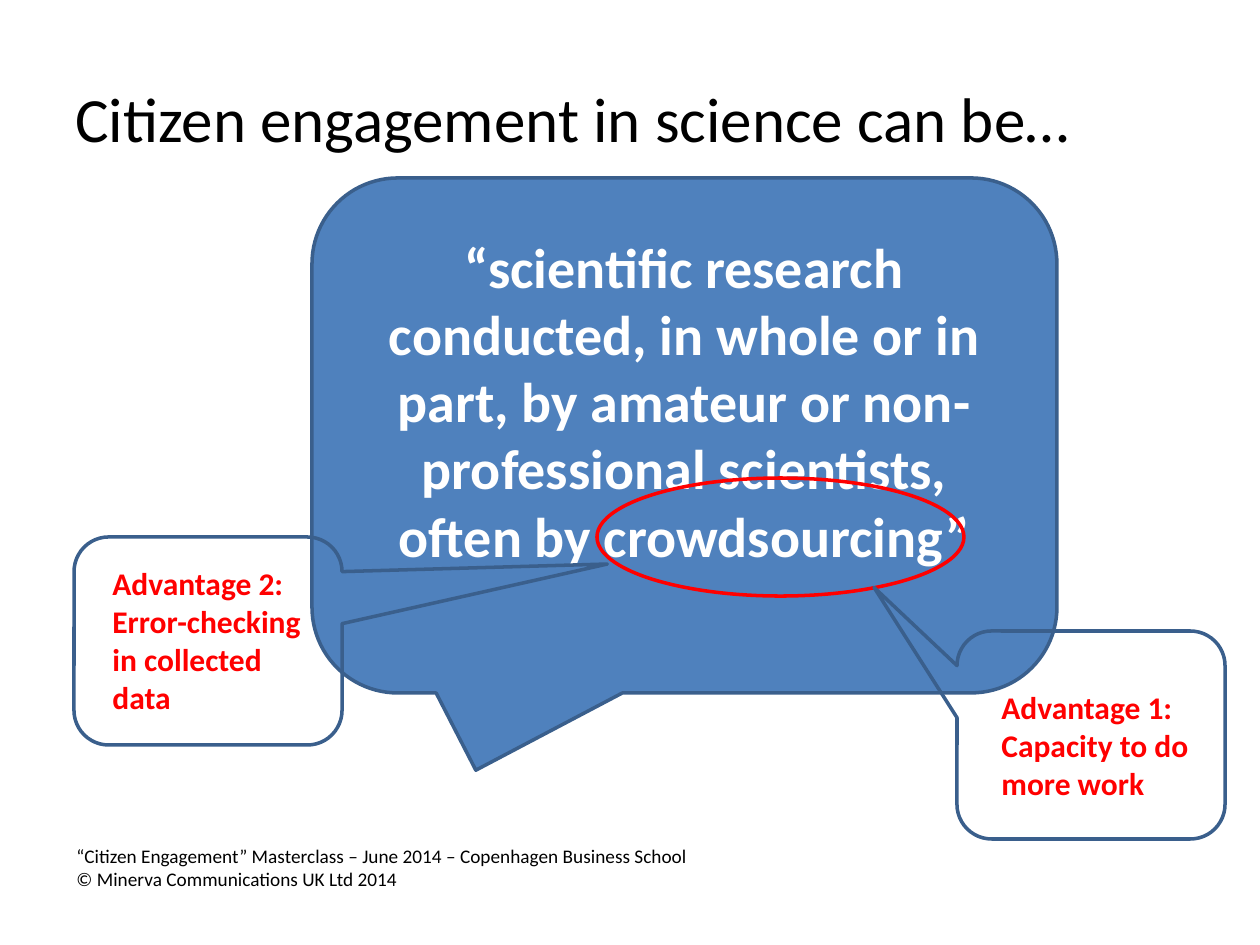
from pptx import Presentation
from pptx.dml.color import RGBColor as RGB
from pptx.enum.shapes import MSO_SHAPE as Shape
from pptx.enum.text import MSO_ANCHOR as Anchor, PP_ALIGN as Align
from pptx.util import Pt

PX = 914400 / 126

THEME = {
    "font": "Calibri",
    "black": "000000", "white": "FFFFFF", "red": "FF0000",
    "blue": "4F81BD", "edge": "3A5F8C",
    "title": 36, "quote": 32, "label": 18, "foot": 11,
    "line": 2,
}

# Content: text, box in px, size, colour, bold, alignment, anchor
FOOT = ("“Citizen Engagement” Masterclass – June 2014 – Copenhagen Business School\v"
        "© Minerva Communications UK Ltd 2014",
        (64, 800, 714, 97), "foot", "black", False, Align.LEFT, Anchor.BOTTOM)
TITLE = ("Citizen engagement in science can be…",
         (63, 38, 1134, 158), "title", "black", False, Align.LEFT, Anchor.MIDDLE)
QUOTE = ("“scientific research conducted, in whole or in part, by amateur or "
         "non-professional scientists, often by crowdsourcing”",
         (362, 226, 645, 352), "quote", "white", True, Align.CENTER, Anchor.TOP)
LABELS = [
    (text, box, "label", "red", True, Align.LEFT, Anchor.TOP)
    for text, box in [
        ("Advantage 1: Capacity to do more work", (989, 682, 218, 127)),
        ("Advantage 2: Error-checking in collected data", (100, 558, 218, 165)),
    ]
]

# Outlines: kind, box in px, fill, line, tail tip relative to the centre
CALL = Shape.ROUNDED_RECTANGULAR_CALLOUT
BUBBLE = (CALL, (312, 178, 745, 515), "blue", "edge", (-0.28, 0.65))
MARKS = [
    (Shape.OVAL, (597, 478, 367, 118), None, "red", None),
    (CALL, (957, 631, 268, 208), None, "edge", (-0.81, -0.71)),
    (CALL, (74, 537, 268, 208), None, "edge", (1.49, -0.37)),
]


def scale(box):
    return [round(n * PX) for n in box]


def tint(name):
    return RGB.from_string(THEME[name])


def write(slide, text, box, size, color, bold, align, anchor):
    frame = slide.shapes.add_textbox(*scale(box)).text_frame
    frame.word_wrap = True
    frame.vertical_anchor = anchor
    para = frame.paragraphs[0]
    para.text = text
    para.alignment = align
    for run in para.runs:
        font = run.font
        font.name, font.size, font.bold = THEME["font"], Pt(THEME[size]), bold
        font.color.rgb = tint(color)


def draw(slide, kind, box, fill, line, tip):
    shape = slide.shapes.add_shape(kind, *scale(box))
    shape.shadow.inherit = False
    if fill:
        shape.fill.solid()
        shape.fill.fore_color.rgb = tint(fill)
    else:
        shape.fill.background()
    shape.line.color.rgb = tint(line)
    shape.line.width = Pt(THEME["line"])
    if tip:
        shape.adjustments[0], shape.adjustments[1] = tip


def main():
    deck = Presentation()
    deck.slide_width, deck.slide_height = scale((1260, 945))
    slide = deck.slides.add_slide(deck.slide_layouts[6])

    # Footer and title
    write(slide, *FOOT)
    write(slide, *TITLE)

    # Quote in its bubble
    draw(slide, *BUBBLE)
    write(slide, *QUOTE)

    # Ring and side callouts, then their labels
    for mark in MARKS:
        draw(slide, *mark)
    for label in LABELS:
        write(slide, *label)

    deck.save("out.pptx")


if __name__ == "__main__":
    main()
